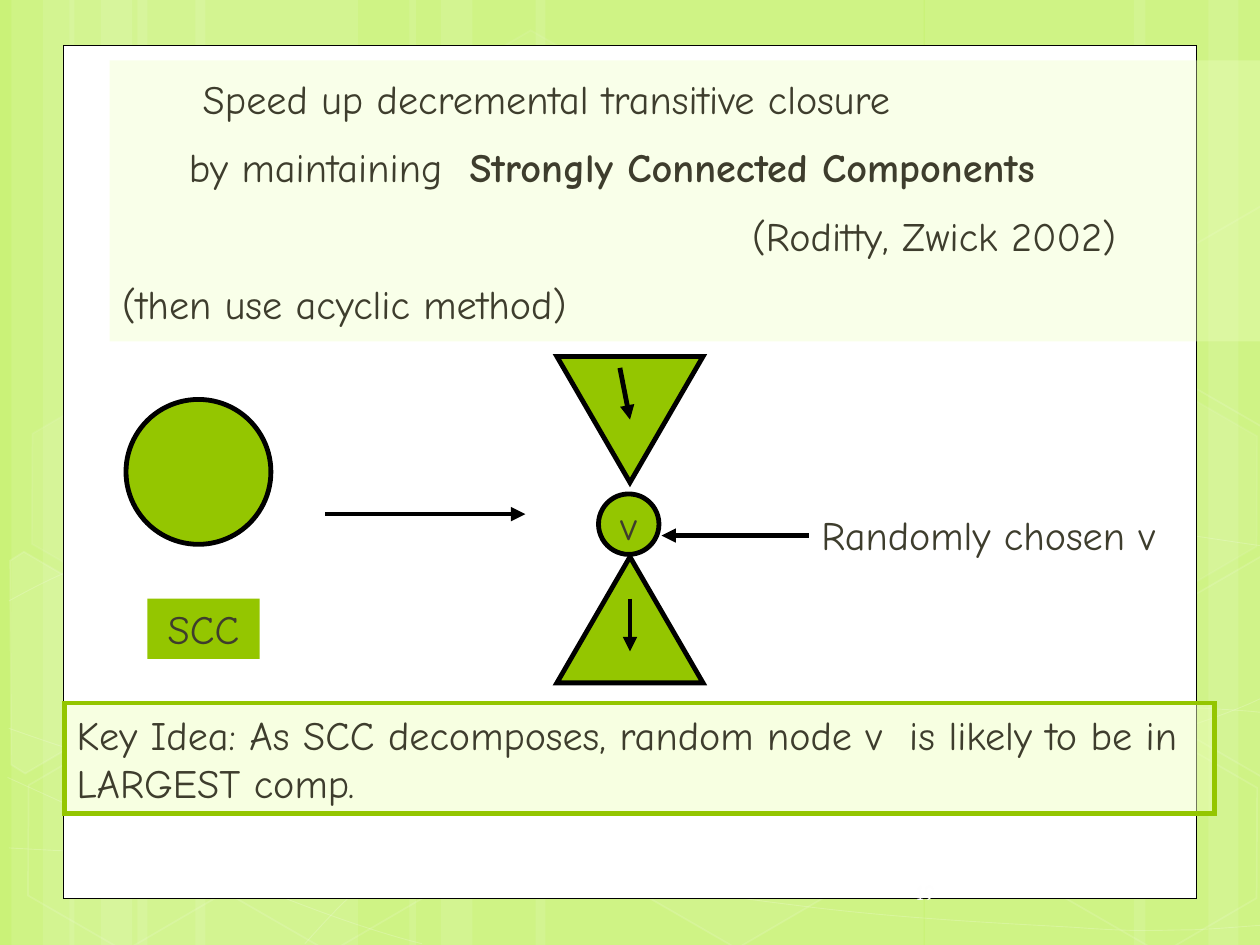
from pptx import Presentation
from pptx.dml.color import RGBColor
from pptx.enum.shapes import MSO_CONNECTOR, MSO_SHAPE
from pptx.enum.text import MSO_ANCHOR, PP_ALIGN
from pptx.oxml.ns import qn
from pptx.util import Inches, Pt
from lxml.etree import SubElement

LIME = RGBColor(0xCA, 0xF2, 0x78)
GREEN = RGBColor(0x94, 0xC6, 0x00)
CREAM = RGBColor(0xEF, 0xFF, 0xC1)
WHITE = RGBColor(0xFF, 0xFF, 0xFF)
PALE = RGBColor(0xFE, 0xFE, 0xFE)
BLACK = RGBColor(0, 0, 0)
INK = RGBColor(0x3E, 0x3D, 0x2D)
FONT = "Comic Neue"
BOLD = 2.75


def paint(shape, fill=None, alpha=100, line=None, width=1, fade=100):
    """Set fill and line; alpha and fade are their opacities in percent."""
    shape.shadow.inherit = False
    edge = shape.line._get_or_add_ln()
    for part, box, color, level in ((shape.fill, shape._element.spPr, fill, alpha),
                                    (shape.line.fill, edge, line, fade)):
        if color is None:
            part.background()
            continue
        part.solid()
        part.fore_color.rgb = color
        if level < 100:
            tone = box.find(qn("a:solidFill")).find(qn("a:srgbClr"))
            SubElement(tone, qn("a:alpha")).set("val", str(level * 1000))
    if line is not None:
        shape.line.width = Pt(width)
        SubElement(edge, qn("a:miter")).set("lim", "800000")


def write(shape, rows, size=23, color=INK, align=PP_ALIGN.LEFT, wrap=True, gap=0):
    """Fill a shape with rows of (indent, [(text, bold), ...])."""
    frame = shape.text_frame
    frame.word_wrap = wrap
    frame.vertical_anchor = MSO_ANCHOR.MIDDLE
    for i, (indent, runs) in enumerate(rows):
        para = frame.add_paragraph() if i else frame.paragraphs[0]
        para.alignment = align
        para.space_before = Pt(gap)
        if indent:
            para._p.get_or_add_pPr().set("marL", str(Inches(indent)))
        for text, bold in runs:
            run = para.add_run()
            run.text = text
            font = run.font
            font.name, font.size, font.bold = FONT, Pt(size), bold
            font.color.rgb = color


deck = Presentation()
deck.slide_width, deck.slide_height = Inches(10), Inches(7.5)
slide = deck.slides.add_slide(deck.slide_layouts[6])
back = slide.background.fill
back.solid()
back.fore_color.rgb = LIME
shapes = slide.shapes

# Background stripes: left, width
stripes = [(1.09, 1.75), (0.09, 0.5), (0.34, 0.83), (1.55, 1.75), (0.55, 0.5), (0.8, 0.83),
           (7.34, 1.75), (9.59, 0.5), (9, 0.83), (4.25, 3.08), (3.25, 0.5), (3.5, 0.83)]
for x, w in stripes:
    bar = shapes.add_shape(MSO_SHAPE.RECTANGLE, Inches(x), 0, Inches(w), Inches(7.5))
    paint(bar, WHITE, 10)

# Background curves: Bezier points, three per segment after the start
curves = [
    [(0.07, 6.73), (0.61, 6.76), (1.15, 6.79), (1.9, 6.78), (2.65, 6.77), (3.58, 6.75), (4.58, 6.65),
     (5.58, 6.55), (7, 6.36), (7.92, 6.17), (8.83, 5.98), (9.77, 5.68), (10.07, 5.51)],
    [(0.07, 4.77), (0.36, 4.61), (0.65, 4.46), (1.21, 4.31), (1.78, 4.16), (2.59, 3.94), (3.47, 3.87),
     (4.36, 3.8), (5.44, 3.79), (6.54, 3.87), (7.64, 3.95), (9.47, 4.26), (10.07, 4.34)],
    [(0.06, 6.17), (1.27, 6.72), (2.47, 7.27), (3.35, 7.49)],
    [(0.07, 5.78), (0.38, 5.89), (0.7, 6), (1.28, 6.16), (1.86, 6.31), (2.73, 6.56), (3.57, 6.73),
     (4.4, 6.9), (5.45, 7.08), (6.28, 7.18), (7.11, 7.29), (8, 7.33), (8.53, 7.36),
     (9.06, 7.4), (9.19, 7.38), (9.45, 7.38), (9.71, 7.37), (9.89, 7.35), (10.07, 7.34)],
    [(2.42, 7.49), (2.6, 7.29), (2.78, 7.09), (3.02, 6.91), (3.26, 6.72), (3.6, 6.53), (3.88, 6.39),
     (4.16, 6.25), (4.33, 6.19), (4.69, 6.09), (5.06, 5.99), (5.73, 5.85), (6.08, 5.78),
     (6.44, 5.71), (6.49, 5.71), (6.8, 5.69), (7.11, 5.66), (7.6, 5.63), (7.94, 5.62),
     (8.29, 5.61), (8.86, 5.62), (8.86, 5.62), (9.08, 5.62), (9.3, 5.62), (9.53, 5.62),
     (9.71, 5.63), (9.88, 5.64), (9.97, 5.65), (10.06, 5.66), (10.03, 5.65), (10.06, 5.66)],
]
for curve in curves:
    (x, y), *rest = curve
    form = shapes.build_freeform(Inches(x), Inches(y))
    form.add_line_segments([(Inches(a), Inches(b)) for a, b in rest], close=False)
    wave = form.convert_to_shape()
    # Join each three straight steps into one Bezier segment
    steps = list(wave._element.iter(qn("a:lnTo")))
    track = steps[0].getparent()
    for i in range(0, len(steps), 3):
        bend = SubElement(track, qn("a:cubicBezTo"))
        for step in steps[i:i + 3]:
            bend.append(step[0])
            track.remove(step)
    paint(wave, line=WHITE, width=0.5, fade=20)

# Background hexagons: left, top, fill opacity, line opacity
hexes = [(3.34, 0.36, 4, 8), (4.97, 5.89, 6, 12), (0.11, 5.91, 0, 12), (0.14, 3.12, 7, 8), (1.74, 5.92, 0, 12),
         (7.53, 4.53, 10, 12), (8.34, 5.93, 0, 12), (8.34, 3.14, 7, 8)]
for x, y, alpha, fade in hexes:
    cell = shapes.add_shape(MSO_SHAPE.HEXAGON, Inches(x), Inches(y), Inches(1.75), Inches(1.52))
    cell.rotation = 30
    cell.adjustments[0] = 0.285
    paint(cell, WHITE if alpha else None, alpha, WHITE, 1, fade)

# Hexagons cut off at the slide edges
cuts = [([(0.08, 4.45), (0.19, 4.38), (0.96, 4.83), (0.95, 5.7), (0.2, 6.14), (0.09, 6.07)], 10),
        ([(9.26, 4.85), (10.02, 4.41), (10.09, 4.46), (10.09, 6.13), (10.02, 6.17), (9.26, 5.73)], 4),
        ([(9.26, 2.07), (10.02, 1.63), (10.1, 1.68), (10.09, 3.35), (10.02, 3.39), (9.26, 2.95)], 0)]
for dots, alpha in cuts:
    (x, y), *rest = dots
    form = shapes.build_freeform(Inches(x), Inches(y))
    form.add_line_segments([(Inches(a), Inches(b)) for a, b in rest], close=True)
    paint(form.convert_to_shape(), WHITE if alpha else None, alpha, WHITE, 1, 12)

# White card and slide number
card = shapes.add_shape(MSO_SHAPE.RECTANGLE, Inches(0.5), Inches(0.36), Inches(9), Inches(6.77))
paint(card, WHITE, line=BLACK, width=0.5)
page = shapes.add_textbox(Inches(7.17), Inches(6.83), Inches(2.08), Inches(0.5))
write(page, [(0, [("19", False)])], size=12, color=PALE)

# Heading panel
head = shapes.add_shape(MSO_SHAPE.RECTANGLE, Inches(0.87), Inches(0.48), Inches(9.41), Inches(2.23))
paint(head, CREAM, 34)
write(head, [(0.64, [("Speed up decremental transitive closure", False)]),
             (0.53, [("by maintaining  ", False), ("Strongly Connected Components", True)]),
             (5, [("(Roditty, Zwick 2002)", False)]),
             (0, [("(then use acyclic method)", False)])], gap=11.5)

# Diagram: kind, left, top, width, height, outline, label
CONE = MSO_SHAPE.ISOSCELES_TRIANGLE
nodes = [(MSO_SHAPE.OVAL, 1, 3.17, 1.15, 1.15, BLACK, ""),
         (MSO_SHAPE.RECTANGLE, 1.17, 4.75, 0.89, 0.48, None, "SCC"),
         (CONE, 4.42, 4.42, 1.16, 1, BLACK, ""),
         (CONE, 4.42, 2.83, 1.16, 1, BLACK, ""),
         (MSO_SHAPE.OVAL, 4.75, 3.92, 0.48, 0.48, BLACK, "v")]
for kind, x, y, w, h, line, label in nodes:
    node = shapes.add_shape(kind, Inches(x), Inches(y), Inches(w), Inches(h))
    paint(node, GREEN, line=line, width=BOLD)
    if label:
        write(node, [(0, [(label, False)])], align=PP_ALIGN.CENTER, wrap=False)
    if kind == CONE and y < 4:  # the upper cone points down
        node._element.spPr.xfrm.set("flipV", "1")

# Arrows
for x1, y1, x2, y2 in [(2.58, 4.08, 4.17, 4.08), (4.92, 2.92, 5, 3.33),
                       (5, 4.75, 5, 5.17), (6.42, 4.25, 5.25, 4.25)]:
    link = shapes.add_connector(MSO_CONNECTOR.STRAIGHT, Inches(x1), Inches(y1), Inches(x2), Inches(y2))
    link.line.color.rgb = BLACK
    link.line.width = Pt(BOLD)
    SubElement(link.line._get_or_add_ln(), qn("a:tailEnd")).set("type", "triangle")
    SubElement(link._element.spPr, qn("a:effectLst"))

# Label beside the chosen node
note = shapes.add_textbox(Inches(6.42), Inches(4), Inches(2.95), Inches(0.48))
write(note, [(0, [("Randomly chosen v", False)])], wrap=False)

# Key idea
idea = shapes.add_shape(MSO_SHAPE.RECTANGLE, Inches(0.51), Inches(5.58), Inches(9.13), Inches(0.88))
paint(idea, CREAM, 47, GREEN, BOLD)
write(idea, [(0, [("Key Idea: As SCC decomposes, random node v  is likely to be in LARGEST comp.", False)])], gap=11.5)

deck.save("out.pptx")
